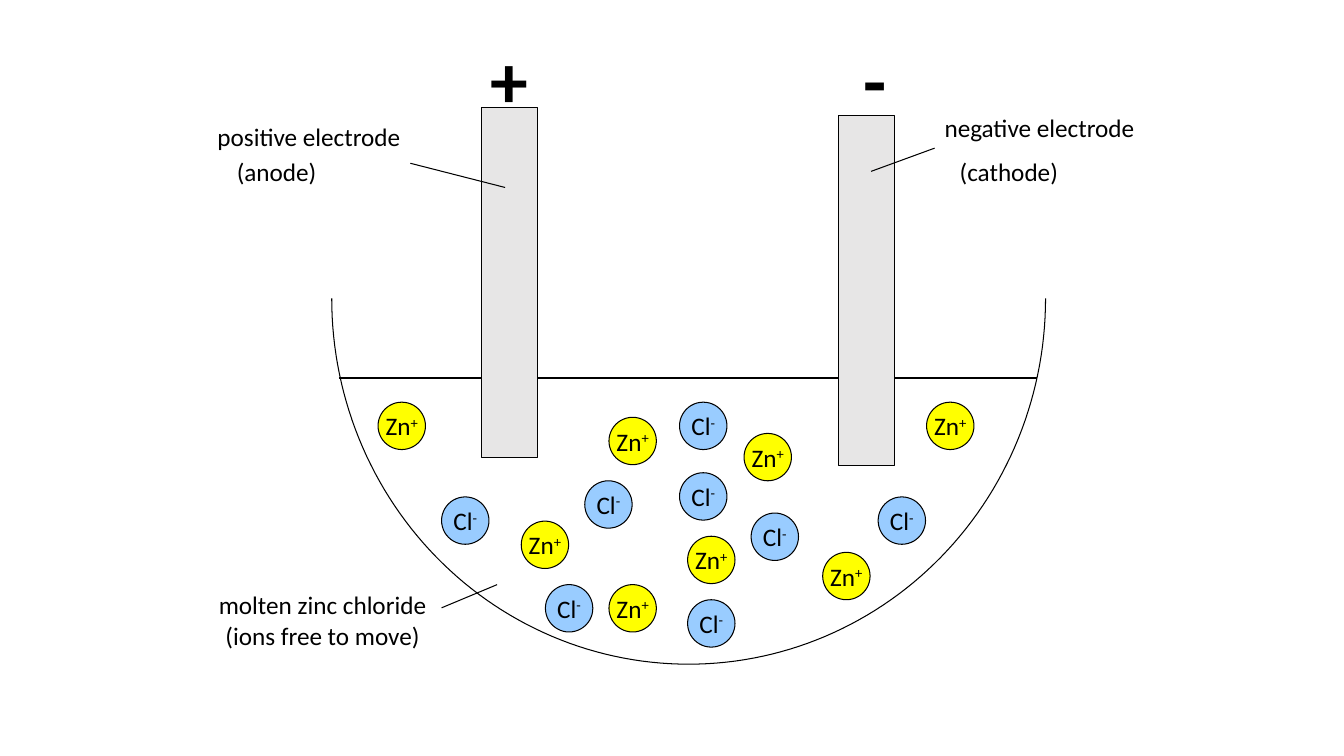
from dataclasses import dataclass
from math import cos, pi, sin

from lxml.etree import SubElement
from pptx import Presentation
from pptx.dml.color import RGBColor
from pptx.enum.shapes import MSO_CONNECTOR, MSO_SHAPE
from pptx.enum.text import MSO_ANCHOR, PP_ALIGN
from pptx.oxml.ns import qn
from pptx.util import Inches, Pt


@dataclass(frozen=True)
class Theme:
    font: str = "Calibri"
    ink: RGBColor = RGBColor(0x00, 0x00, 0x00)
    electrode: RGBColor = RGBColor(0xE7, 0xE6, 0xE6)
    zinc: RGBColor = RGBColor(0xFF, 0xFF, 0x00)
    chloride: RGBColor = RGBColor(0x99, 0xCC, 0xFF)
    label_size: Pt = Pt(18)
    sign_size: Pt = Pt(54)
    line_width: Pt = Pt(0.75)


THEME = Theme()
ION_SIZE = 0.47
ELECTRODE_SIZE = (0.55, 3.47)

ZINC_IONS = [
    (8.16, 5.48), (5.17, 5.17), (6.82, 5.32), (6.04, 4.14),
    (7.38, 4.3), (6.04, 5.8), (3.75, 3.99), (9.19, 3.99),
]
CHLORIDE_IONS = [
    (4.38, 4.93), (5.8, 4.77), (6.82, 5.95), (6.74, 3.99),
    (7.45, 5.09), (8.71, 4.93), (6.74, 4.69), (5.41, 5.8),
]


def style_line(line):
    line.color.rgb = THEME.ink
    line.width = THEME.line_width


def style_text(paragraph, size, alignment, bold=False):
    paragraph.alignment = alignment
    paragraph.font.name = THEME.font
    paragraph.font.size = size
    paragraph.font.bold = bold
    paragraph.font.color.rgb = THEME.ink


def add_bowl(slide, center_x, rim_y, radius_x, radius_y, steps=120):
    """Draw the lower half of an ellipse as an open outline."""
    points = [
        (Inches(center_x + radius_x * cos(pi * step / steps)),
         Inches(rim_y + radius_y * sin(pi * step / steps)))
        for step in range(steps + 1)
    ]
    builder = slide.shapes.build_freeform(*points[0])
    builder.add_line_segments(points[1:], close=False)
    bowl = builder.convert_to_shape()
    bowl.shadow.inherit = False
    bowl.fill.background()
    style_line(bowl.line)


def add_line(slide, start, end):
    connector = slide.shapes.add_connector(
        MSO_CONNECTOR.STRAIGHT, *map(Inches, start + end))
    style_line(connector.line)
    SubElement(connector._element.spPr, qn("a:effectLst"))


def add_filled_shape(slide, kind, left, top, width, height, color):
    shape = slide.shapes.add_shape(
        kind, *map(Inches, (left, top, width, height)))
    shape.shadow.inherit = False
    shape.fill.solid()
    shape.fill.fore_color.rgb = color
    style_line(shape.line)
    return shape


def add_ion(slide, left, top, symbol, charge, color):
    ion = add_filled_shape(
        slide, MSO_SHAPE.OVAL, left, top, ION_SIZE, ION_SIZE, color)
    frame = ion.text_frame
    frame.word_wrap = False
    frame.vertical_anchor = MSO_ANCHOR.MIDDLE
    paragraph = frame.paragraphs[0]
    style_text(paragraph, THEME.label_size, PP_ALIGN.CENTER)
    paragraph.add_run().text = symbol
    superscript = paragraph.add_run()
    superscript.text = charge
    superscript._r.get_or_add_rPr().set("baseline", "30000")


def add_label(slide, text, left, top, width, height, alignment=PP_ALIGN.LEFT,
              size=THEME.label_size, bold=False):
    box = slide.shapes.add_textbox(*map(Inches, (left, top, width, height)))
    frame = box.text_frame
    frame.word_wrap = True
    frame.text = text
    style_text(frame.paragraphs[0], size, alignment, bold)


def main():
    presentation = Presentation()
    presentation.slide_width = Inches(13.33)
    presentation.slide_height = Inches(7.5)
    slide = presentation.slides.add_slide(presentation.slide_layouts[6])

    # Bowl and liquid surface
    add_bowl(slide, 6.83, 2.96, 3.54, 3.63)
    add_line(slide, (3.36, 3.75), (10.29, 3.75))

    # Electrodes with their signs
    for left, top in [(4.78, 1.07), (8.32, 1.15)]:
        add_filled_shape(slide, MSO_SHAPE.RECTANGLE, left, top,
                         *ELECTRODE_SIZE, THEME.electrode)
    for sign, left in [("+", 4.62), ("-", 8.24)]:
        add_label(slide, sign, left, 0.28, 0.87, 1, PP_ALIGN.CENTER,
                  THEME.sign_size, bold=True)

    # Ions
    for symbol, charge, color, places in [
        ("Zn", "+", THEME.zinc, ZINC_IONS),
        ("Cl", "-", THEME.chloride, CHLORIDE_IONS),
    ]:
        for left, top in places:
            add_ion(slide, left, top, symbol, charge, color)

    # Labels and leader lines
    add_label(slide, "positive electrode", 1.67, 1.15, 2.4, 0.4,
              PP_ALIGN.RIGHT)
    add_label(slide, "(anode)", 2.25, 1.5, 1.42, 0.4)
    add_label(slide, "negative electrode", 9.27, 1.07, 2.4, 0.4)
    add_label(slide, "(cathode)", 9.42, 1.5, 2, 0.4)
    add_label(slide, "molten zinc chloride (ions free to move)",
              2.02, 5.8, 2.36, 0.71, PP_ALIGN.CENTER)
    for start, end in [
        ((4.07, 1.62), (5.01, 1.86)),
        ((8.64, 1.7), (9.27, 1.47)),
        ((4.38, 6.03), (4.93, 5.8)),
    ]:
        add_line(slide, start, end)

    presentation.save("out.pptx")


if __name__ == "__main__":
    main()
